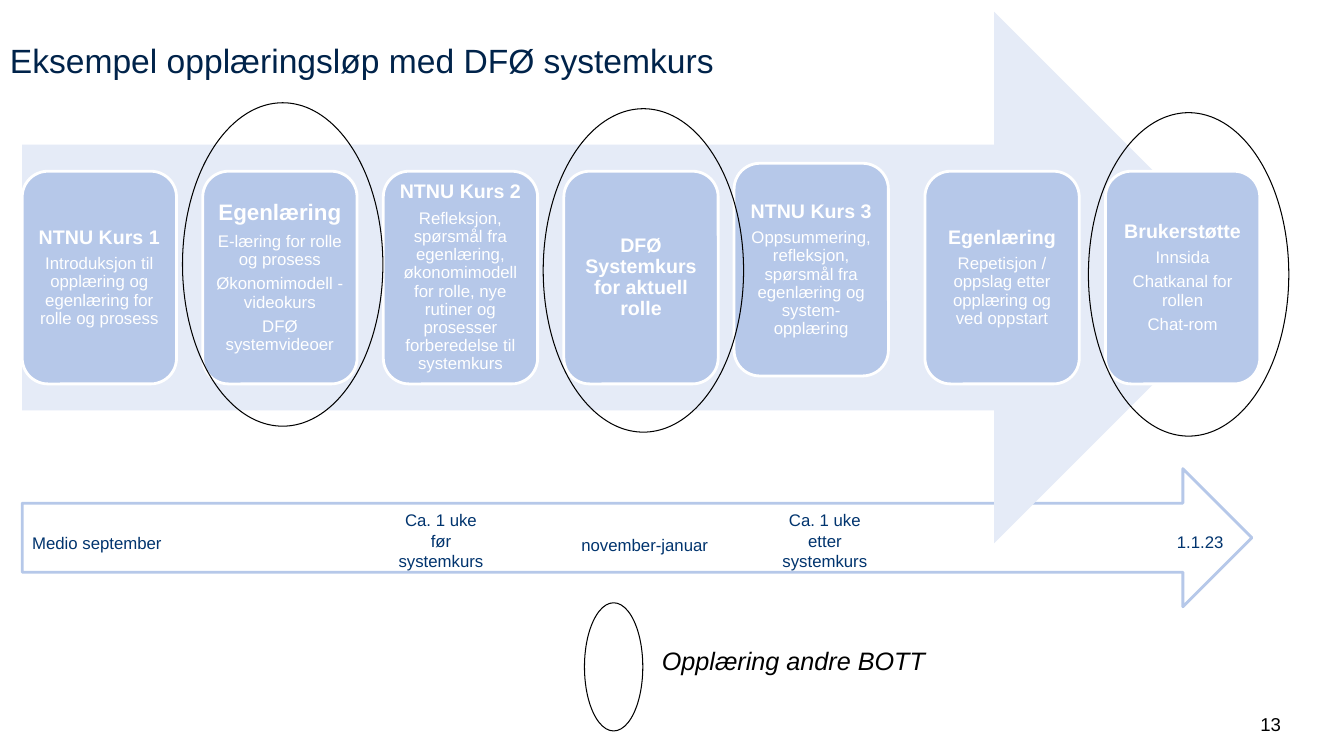
from pptx import Presentation
from pptx.dml.color import RGBColor
from pptx.enum.shapes import MSO_SHAPE
from pptx.enum.text import MSO_ANCHOR, PP_ALIGN
from pptx.util import Cm, Pt

COLORS = {
    "title": "00234A",
    "label": "01346E",
    "band": "E5EBF7",
    "card": "B6C8E9",
    "white": "FFFFFF",
    "black": "000000",
}
FONT = "Arial"
CARD_WIDTH, CARD_HEIGHT, CARD_PITCH = 3.89, 5.36, 4.55

CARDS = [
    ("NTNU Kurs 1", 14, ["Introduksjon til opplæring og egenlæring for rolle og prosess"]),
    ("Egenlæring", 16, ["E-læring for rolle og prosess", "Økonomimodell - videokurs",
                        "DFØ systemvideoer"]),
    ("NTNU Kurs 2", 14, ["Refleksjon, spørsmål fra egenlæring, økonomimodell for rolle, "
                         "nye rutiner og prosesser forberedelse til systemkurs"]),
    ("DFØ Systemkurs for aktuell rolle", 14, []),
    ("NTNU Kurs 3", 14, ["Oppsummering, refleksjon, spørsmål fra egenlæring og "
                         "system-opplæring"]),
    ("Egenlæring", 14, ["Repetisjon / oppslag etter opplæring og ved oppstart"]),
    ("Brukerstøtte", 14, ["Innsida", "Chatkanal for rollen", "Chat-rom"]),
]
CARD_NUDGES = {4: (-0.26, -0.2)}

MILESTONES = [
    (0, 1.5, 4.75, ["Medio september"], PP_ALIGN.LEFT),
    (8.03, 0.92, 5.05, ["Ca. 1 uke", "før", "systemkurs"], PP_ALIGN.CENTER),
    (13.84, 1.53, 4.04, ["november-januar"], PP_ALIGN.LEFT),
    (18.64, 0.92, 3.18, ["Ca. 1 uke", "etter", "systemkurs"], PP_ALIGN.CENTER),
    (28.85, 1.47, 1.75, ["1.1.23"], PP_ALIGN.LEFT),
]
COURSE_RINGS = [(4.6, 2.59), (13.69, 2.74), (27.43, 2.84)]


def color(name):
    return RGBColor.from_string(COLORS[name])


def add_outline(slide, kind, box, fill=None, line=None, line_width=0.75):
    shape = slide.shapes.add_shape(kind, *map(Cm, box))
    shape.shadow.inherit = False
    if fill:
        shape.fill.solid()
        shape.fill.fore_color.rgb = color(fill)
    else:
        shape.fill.background()
    if line:
        shape.line.color.rgb = color(line)
        shape.line.width = Pt(line_width)
    else:
        shape.line.fill.background()
    return shape


def style(paragraph, text, size, ink, alignment=PP_ALIGN.LEFT, bold=False, italic=False):
    paragraph.text = text
    paragraph.alignment = alignment
    font = paragraph.font
    font.name, font.size = FONT, Pt(size)
    font.bold, font.italic = bold, italic
    font.color.rgb = color(ink)


def add_label(slide, box, lines, size, ink, alignment=PP_ALIGN.LEFT, italic=False):
    frame = slide.shapes.add_textbox(*map(Cm, box)).text_frame
    frame.word_wrap = True
    for index, line in enumerate(lines):
        paragraph = frame.add_paragraph() if index else frame.paragraphs[0]
        style(paragraph, line, size, ink, alignment, italic=italic)


def add_card(slide, box, heading, heading_size, details):
    card = add_outline(slide, MSO_SHAPE.ROUNDED_RECTANGLE, box, "card", "white", 2)
    frame = card.text_frame
    frame.word_wrap = True
    frame.vertical_anchor = MSO_ANCHOR.MIDDLE
    frame.margin_left = frame.margin_right = Cm(0.15)
    frame.margin_top = frame.margin_bottom = Cm(0.15)
    for index, text in enumerate([heading, *details]):
        paragraph = frame.add_paragraph() if index else frame.paragraphs[0]
        size = 12 if index else heading_size
        style(paragraph, text, size, "white", PP_ALIGN.CENTER, bold=index == 0)
        paragraph.line_spacing = 0.9
        paragraph.space_after = Pt(round(size * 0.35, 1))


def add_course_path(slide, box):
    left, top, _, height = box
    add_outline(slide, MSO_SHAPE.RIGHT_ARROW, box, "band")
    card_top = top + (height - CARD_HEIGHT) / 2
    for index, (heading, size, details) in enumerate(CARDS):
        shift_x, shift_y = CARD_NUDGES.get(index, (0, 0))
        card_box = (left + index * CARD_PITCH + shift_x, card_top + shift_y,
                    CARD_WIDTH, CARD_HEIGHT)
        add_card(slide, card_box, heading, size, details)


def add_milestones(slide, box):
    left, top = box[:2]
    for offset_x, offset_y, width, lines, alignment in MILESTONES:
        height = 0.25 + 0.51 * len(lines)
        add_label(slide, (left + offset_x, top + offset_y, width, height),
                  lines, 12, "label", alignment)


def add_legend(slide, box):
    left, top, width, height = box
    add_outline(slide, MSO_SHAPE.OVAL, (left, top, 1.47, height), line="black")
    add_label(slide, (left + 1.7, top + 0.94, width - 1.7, 1.02),
              ["Opplæring andre BOTT"], 18, "black", italic=True)


def build_training_slide(presentation):
    slide = presentation.slides.add_slide(presentation.slide_layouts[6])
    timeline_box = (0.56, 11.81, 30.99, 3.48)
    add_label(slide, (31.39, 17.83, 1.27, 1.02), ["13"], 13.3, "black", PP_ALIGN.CENTER)
    add_outline(slide, MSO_SHAPE.RIGHT_ARROW, timeline_box, "white", "card", 2)
    add_label(slide, (0, 0.89, 31.19, 1.3),
              ["Eksempel opplæringsløp med DFØ systemkurs"], 24, "title")
    add_course_path(slide, (0.56, 0.3, 31.19, 13.39))
    add_milestones(slide, timeline_box)
    for left, top in COURSE_RINGS:
        add_outline(slide, MSO_SHAPE.OVAL, (left, top, 5.05, 8.15), line="black")
    add_legend(slide, (14.73, 15.19, 9.02, 3.23))


def main():
    presentation = Presentation()
    presentation.slide_width = Cm(33.87)
    presentation.slide_height = Cm(19.05)
    build_training_slide(presentation)
    presentation.save("out.pptx")


if __name__ == "__main__":
    main()
